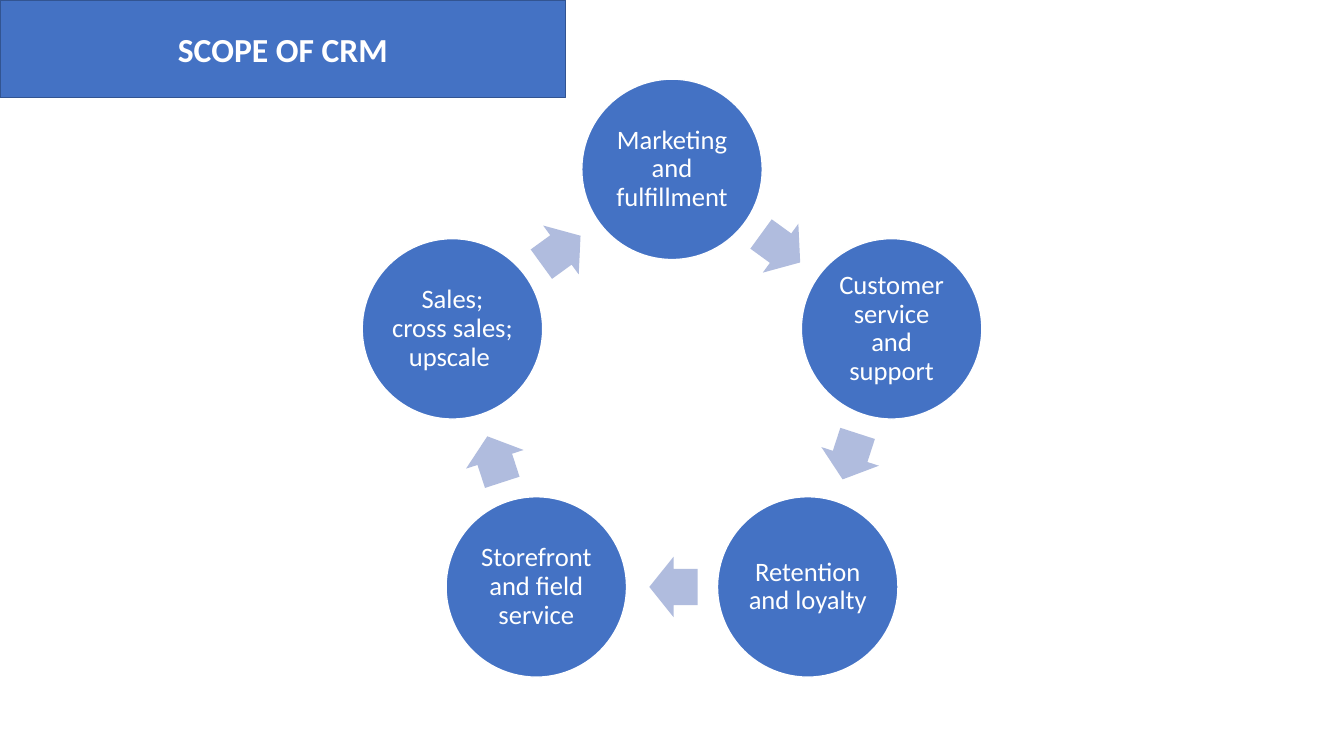
"""Build the CRM scope slide: a title banner and a five-stage cycle."""

from dataclasses import dataclass
from math import cos, radians, sin

from pptx import Presentation
from pptx.dml.color import RGBColor
from pptx.enum.shapes import MSO_SHAPE
from pptx.enum.text import MSO_ANCHOR, MSO_AUTO_SIZE, PP_ALIGN
from pptx.shapes.autoshape import Shape
from pptx.slide import Slide
from pptx.util import Inches, Pt

BLUE = RGBColor(0x44, 0x72, 0xC4)
DARK_BLUE = RGBColor(0x32, 0x54, 0x91)
PALE_BLUE = RGBColor(0xB0, 0xBC, 0xDE)
WHITE = RGBColor(0xFF, 0xFF, 0xFF)
FONT = "Calibri"

CENTER_X, CENTER_Y = 6.665, 3.97
RING_RADIUS = 2.29
CIRCLE_SIZE = 1.79
ARROW_WIDTH, ARROW_HEIGHT = 0.48, 0.6
ARROW_SETBACK = 0.015


@dataclass(frozen=True)
class Stage:
    label: str
    angle: float


LABELS = (
    "Marketing and fulfillment",
    "Customer service and support",
    "Retention and loyalty",
    "Storefront and field service",
    "Sales; cross sales; upscale ",
)
STEP = 360 / len(LABELS)
STAGES = [Stage(label, index * STEP) for index, label in enumerate(LABELS)]


def paint(shape: Shape, fill: RGBColor, line: RGBColor) -> None:
    shape.fill.solid()
    shape.fill.fore_color.rgb = fill
    shape.line.color.rgb = line
    shape.line.width = Pt(1)


def write(shape: Shape, text: str, size: float, bold: bool, spacing: float) -> None:
    frame = shape.text_frame
    frame.text = text
    frame.word_wrap = True
    frame.auto_size = MSO_AUTO_SIZE.NONE
    frame.vertical_anchor = MSO_ANCHOR.MIDDLE
    para = frame.paragraphs[0]
    para.alignment = PP_ALIGN.CENTER
    para.line_spacing = spacing
    font = para.runs[0].font
    font.name, font.size, font.bold = FONT, Pt(size), bold
    font.color.rgb = WHITE


def add_centered(page: Slide, kind: MSO_SHAPE, x: float, y: float,
                 width: float, height: float) -> Shape:
    shape = page.shapes.add_shape(kind, Inches(x - width / 2), Inches(y - height / 2),
                                  Inches(width), Inches(height))
    shape.shadow.inherit = False
    return shape


def add_circle(page: Slide, stage: Stage) -> None:
    turn = radians(stage.angle)
    circle = add_centered(page, MSO_SHAPE.OVAL, CENTER_X + RING_RADIUS * sin(turn),
                          CENTER_Y - RING_RADIUS * cos(turn), CIRCLE_SIZE, CIRCLE_SIZE)
    paint(circle, BLUE, WHITE)
    write(circle, stage.label, 19, False, 0.9)
    frame = circle.text_frame
    frame.margin_left = frame.margin_right = Inches(0.03)
    frame.margin_top = frame.margin_bottom = Inches(0.03)


def add_arrow(page: Slide, stage: Stage) -> None:
    heading = stage.angle + STEP / 2
    turn = radians(heading)
    reach = RING_RADIUS * cos(radians(STEP / 2))
    arrow = add_centered(page, MSO_SHAPE.RIGHT_ARROW,
                         CENTER_X + reach * sin(turn) - ARROW_SETBACK * cos(turn),
                         CENTER_Y - reach * cos(turn) - ARROW_SETBACK * sin(turn),
                         ARROW_WIDTH, ARROW_HEIGHT)
    arrow.adjustments[0], arrow.adjustments[1] = 0.6, 0.5
    arrow.rotation = heading
    arrow.fill.solid()
    arrow.fill.fore_color.rgb = PALE_BLUE
    arrow.line.fill.background()


def add_banner(page: Slide) -> None:
    banner = page.shapes.title
    banner.left, banner.top = Inches(0), Inches(0)
    banner.width, banner.height = Inches(5.61), Inches(0.97)
    paint(banner, BLUE, DARK_BLUE)
    write(banner, "SCOPE OF CRM", 24, True, 1.0)


def main() -> None:
    deck = Presentation()
    deck.slide_width, deck.slide_height = Inches(13.33), Inches(7.5)
    page = deck.slides.add_slide(deck.slide_layouts.get_by_name("Title Only"))
    add_banner(page)
    for stage in STAGES:
        add_circle(page, stage)
        add_arrow(page, stage)
    deck.save("out.pptx")


if __name__ == "__main__":
    main()
